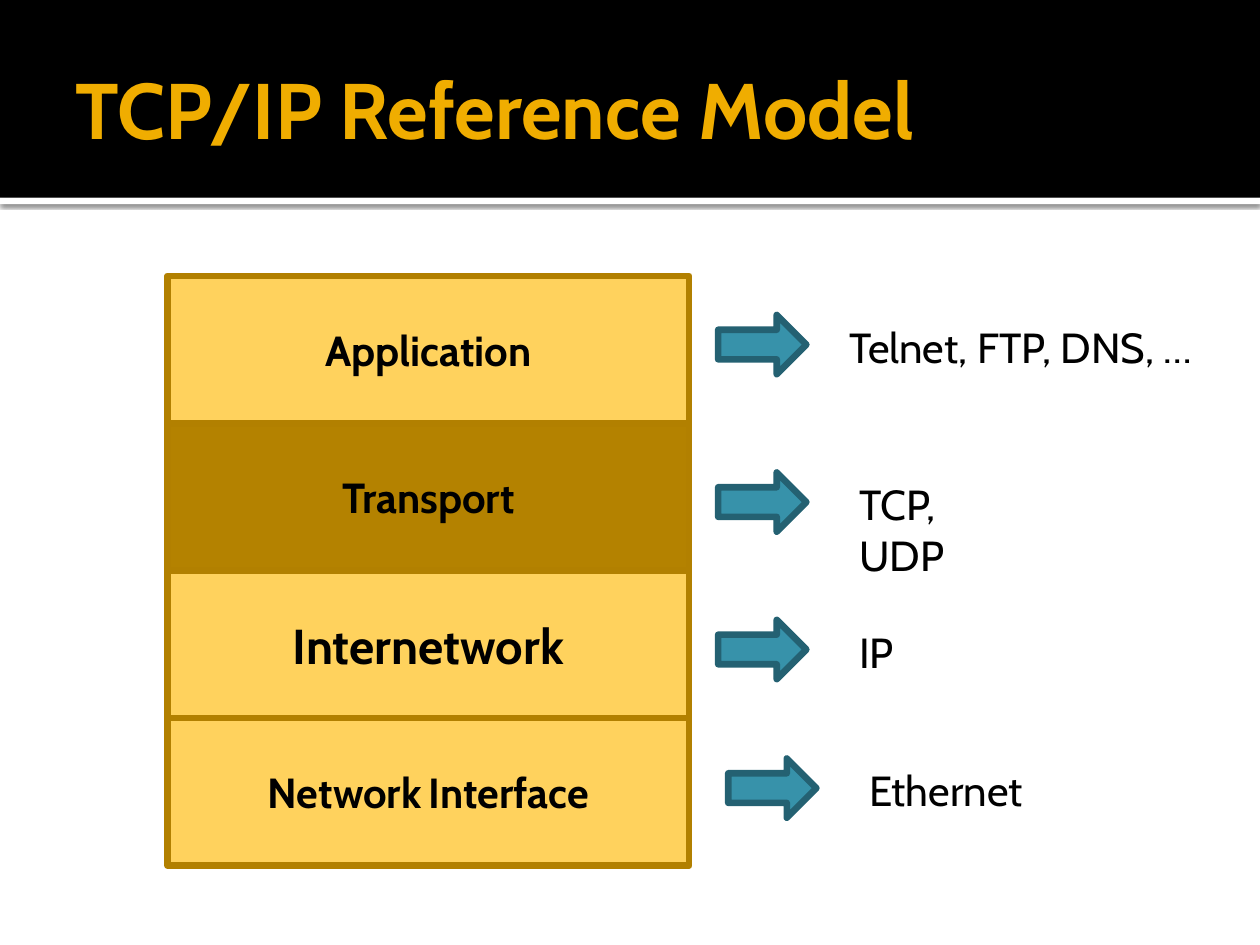
from dataclasses import dataclass

from lxml import etree
from pptx import Presentation
from pptx.dml.color import RGBColor
from pptx.enum.shapes import MSO_SHAPE
from pptx.enum.text import MSO_ANCHOR, PP_ALIGN
from pptx.oxml import parse_xml
from pptx.oxml.ns import nsdecls
from pptx.util import Inches, Pt

RECT, ARROW = MSO_SHAPE.RECTANGLE, MSO_SHAPE.RIGHT_ARROW
MIDDLE, TOP = MSO_ANCHOR.MIDDLE, MSO_ANCHOR.TOP
LEFT, CENTER = PP_ALIGN.LEFT, PP_ALIGN.CENTER

FONT = "Cabin"
COLORS = {
    "white": "FFFFFF",
    "black": "000000",
    "title": "F0AD00",
    "layer": "FFD25D",
    "transport": "B48200",
    "layer_line": "B28000",
    "arrow": "3792AA",
    "arrow_line": "246172",
}
LAYER_LEFT, LAYER_TOP, LAYER_W, LAYER_H = 1.33, 2.19, 4.14, 1.17


@dataclass
class Layer:
    runs: list[tuple[str, int]]
    protocols: str
    arrow_left: float
    label_left: float
    row_top: float
    label_width: float
    fill: str = "layer"
    wrap: bool = False


LAYERS = [
    Layer([("Application", 24)], "Telnet, FTP, DNS, …", 5.7, 6.64, 2.5, 2.97),
    Layer([("Transport", 24)], "TCP, UDP", 5.7, 6.72, 3.75, 1.5, "transport", True),
    Layer([("Internetwork", 28)], "IP", 5.7, 6.72, 4.92, 0.48),
    Layer([("Network", 24), (" ", 18), ("Interface", 24)], "Ethernet", 5.78, 6.8, 6.02, 1.43),
]


def rgb(name: str) -> RGBColor:
    return RGBColor.from_string(COLORS[name])


def write(sp, runs: list[tuple[str, int]], *, color: str = "black", bold: bool = False,
          align=LEFT, anchor=TOP, wrap: bool = True) -> None:
    tf = sp.text_frame
    tf.word_wrap = wrap
    tf.vertical_anchor = anchor
    p = tf.paragraphs[0]
    p.alignment = align
    for text, size in runs:
        r = p.add_run()
        r.text = text
        r.font.name = FONT
        r.font.size = Pt(size)
        r.font.bold = bold
        r.font.color.rgb = rgb(color)


def add_block(s, kind, left: float, top: float, width: float, height: float,
              fill: str, line: str | None = None):
    sp = s.shapes.add_shape(kind, Inches(left), Inches(top), Inches(width), Inches(height))
    sp.shadow.inherit = False
    sp.fill.solid()
    sp.fill.fore_color.rgb = rgb(fill)
    if line:
        sp.line.color.rgb = rgb(line)
        sp.line.width = Pt(3.78)
    else:
        sp.line.fill.background()
    return sp


def add_label(s, left: float, top: float, width: float, height: float):
    return s.shapes.add_textbox(Inches(left), Inches(top), Inches(width), Inches(height))


def add_shadow(sp) -> None:
    effects = sp._element.spPr.find("{*}effectLst")
    shadow = parse_xml(
        f'<a:outerShdw {nsdecls("a")} blurRad="{Pt(2.5)}" dist="{Pt(0.8)}" dir="5400000"/>')
    color = etree.SubElement(shadow, shadow.tag.replace("outerShdw", "srgbClr"))
    color.set("val", COLORS["black"])
    etree.SubElement(color, shadow.tag.replace("outerShdw", "alpha")).set("val", "60000")
    effects.append(shadow)


def add_header(s) -> None:
    add_shadow(add_block(s, RECT, 0, 1.57, 10, 0.05, "white"))
    add_block(s, RECT, 0, 0, 10, 1.57, "black")
    title = add_label(s, 0.5, 0.17, 9, 1.37)
    title.text_frame.margin_right = Inches(0.05)
    write(title, [("TCP/IP Reference Model", 45)], color="title", bold=True, anchor=MIDDLE)


def add_layer(s, index: int, layer: Layer) -> None:
    sp = add_block(s, RECT, LAYER_LEFT, LAYER_TOP + index * LAYER_H, LAYER_W, LAYER_H,
                   layer.fill, "layer_line")
    write(sp, layer.runs, bold=True, align=CENTER, anchor=MIDDLE)
    add_block(s, ARROW, layer.arrow_left, layer.row_top, 0.7, 0.47, "arrow", "arrow_line")
    label = add_label(s, layer.label_left, layer.row_top, layer.label_width, 0.5)
    write(label, [(layer.protocols, 24)], wrap=layer.wrap)


def main() -> None:
    """Build the TCP/IP reference model slide."""
    prs = Presentation()
    prs.slide_width, prs.slide_height = Inches(10), Inches(7.5)
    s = prs.slides.add_slide(prs.slide_layouts[6])
    add_header(s)
    for index, layer in reversed(list(enumerate(LAYERS))):
        add_layer(s, index, layer)
    prs.save("out.pptx")


if __name__ == "__main__":
    main()
